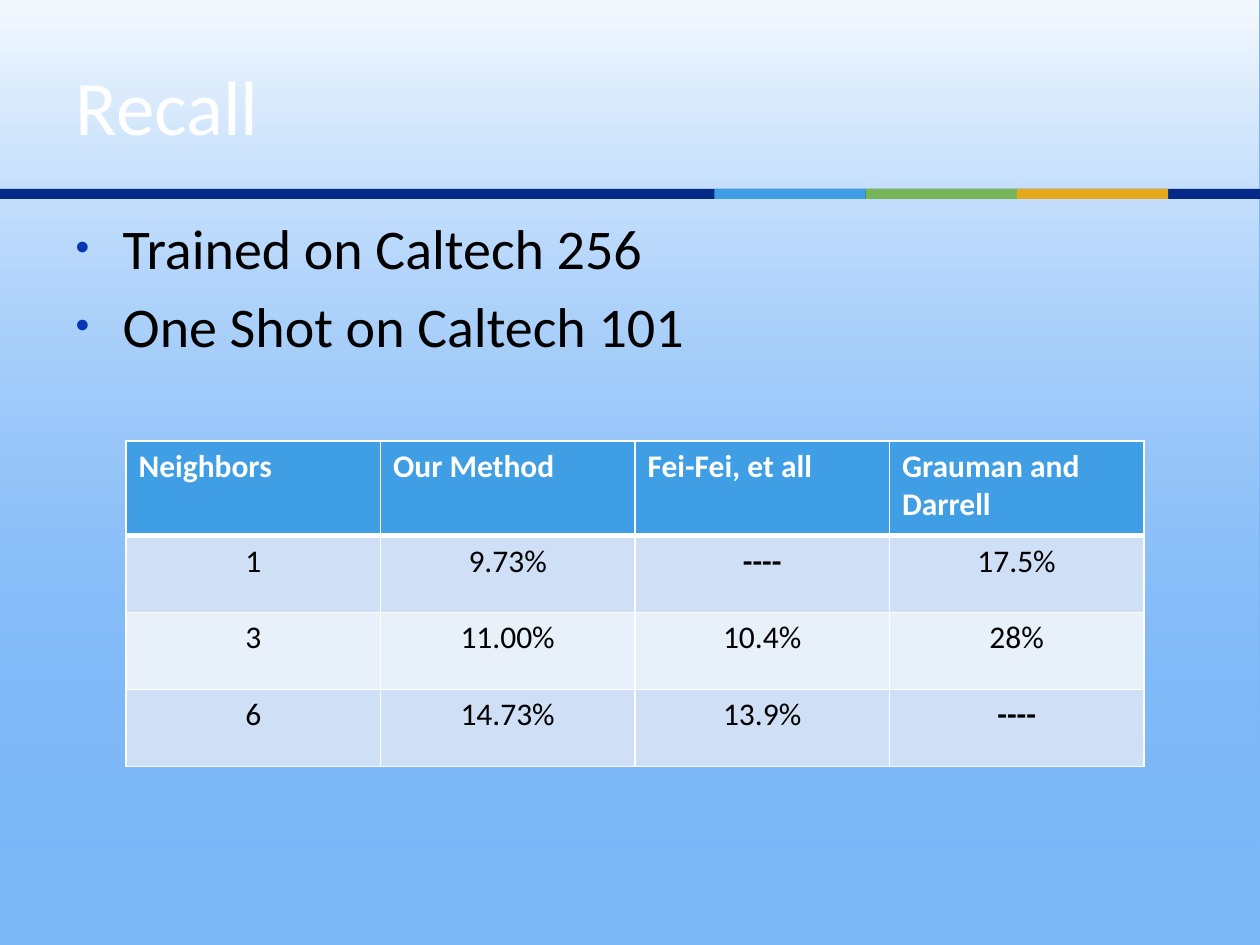
import pptx
import pptx.util
import pptx.oxml
import pptx.oxml.ns
import pptx.dml.color
import pptx.enum.shapes
import pptx.enum.text
from pptx.util import Cm, Pt

TITLE = "Recall"
BULLETS = ["Trained on Caltech 256", "One Shot on Caltech 101"]
ROWS = [
    ["Neighbors", "Our Method", "Fei-Fei, et all", "Grauman and Darrell"],
    ["1", "9.73%", "----", "17.5%"],
    ["3", "11.00%", "10.4%", "28%"],
    ["6", "14.73%", "13.9%", "----"],
]
COLORS = {
    "sky": "7CB7F8", "navy": "042986", "blue": "3F9EE4", "green": "77B559",
    "gold": "E4A81B", "bullet": "0536B3", "band": "CFDFF5", "pale": "E8F0FA",
    "white": "FFFFFF", "black": "000000",
}
FONT = "Calibri"
SLIDE_W, SLIDE_H = 25.4, 19.05
STRIPE_TOP, STRIPE_H = 3.81, 0.2
ACCENT_LEFT, ACCENT_W = 14.4, 3.05
COL_W, HEADER_H, ROW_H = 5.13, 1.91, 1.55


def rgb(name):
    return pptx.dml.color.RGBColor.from_string(COLORS[name])


def make_element(xml):
    """Turn a fragment with the a: prefix into an element."""
    return pptx.oxml.parse_xml(f"<a:wrap {pptx.oxml.ns.nsdecls('a')}>{xml}</a:wrap>")[0]


def style(p, size, color, bold=False):
    for r in p.runs:
        r.font.name, r.font.size, r.font.bold = FONT, Pt(size), bold
        r.font.color.rgb = rgb(color)


def place(sp, left, top, width, height):
    sp.left, sp.top, sp.width, sp.height = Cm(left), Cm(top), Cm(width), Cm(height)


def add_backdrop(s, left, top, width, height, color):
    """Add a plain rectangle behind the placeholders."""
    sp = s.shapes.add_shape(pptx.enum.shapes.MSO_SHAPE.RECTANGLE,
                            Cm(left), Cm(top), Cm(width), Cm(height))
    sp.shadow.inherit = False
    sp.fill.solid()
    sp.fill.fore_color.rgb = rgb(color)
    sp.line.fill.background()
    s.shapes.title.element.addprevious(sp.element)
    return sp


def add_glow(s):
    """Add the white glow that fades out down the slide."""
    sp = add_backdrop(s, -0.02, 0, SLIDE_W, 17.48, "white")
    solid = sp.element.spPr.find(pptx.oxml.ns.qn("a:solidFill"))
    solid.getparent().replace(solid, make_element(
        '<a:gradFill rotWithShape="1"><a:gsLst>'
        f'<a:gs pos="1000"><a:srgbClr val="{COLORS["sky"]}"><a:alpha val="0"/></a:srgbClr></a:gs>'
        f'<a:gs pos="100000"><a:srgbClr val="{COLORS["white"]}"><a:alpha val="92000"/></a:srgbClr></a:gs>'
        '</a:gsLst><a:lin ang="16200000" scaled="0"/></a:gradFill>'))


def add_stripe(s):
    add_backdrop(s, 0, STRIPE_TOP, SLIDE_W, STRIPE_H, "navy")
    for i, color in enumerate(["blue", "green", "gold"]):
        add_backdrop(s, ACCENT_LEFT + i * ACCENT_W, STRIPE_TOP, ACCENT_W, STRIPE_H, color)


def fill_title(s):
    sp = s.shapes.title
    place(sp, 1.27, 0.53, 22.86, 3.17)
    tf = sp.text_frame
    tf.text = TITLE
    tf.vertical_anchor = pptx.enum.text.MSO_ANCHOR.MIDDLE
    tf.paragraphs[0].alignment = pptx.enum.text.PP_ALIGN.LEFT
    style(tf.paragraphs[0], 44, "white")


def fill_body(s):
    sp = s.placeholders[1]
    place(sp, 1.27, 4.17, 22.86, 12.85)
    tf = sp.text_frame
    tf.text = "\n".join(BULLETS)
    for p in tf.paragraphs:
        style(p, 32, "black")
        pPr = p._p.get_or_add_pPr()
        pPr.set("marL", str(Cm(0.95)))
        pPr.set("indent", str(-Cm(0.95)))
        for xml in ('<a:spcBef><a:spcPct val="20000"/></a:spcBef>',
                    f'<a:buClr><a:srgbClr val="{COLORS["bullet"]}"/></a:buClr>',
                    '<a:buSzPct val="70000"/>',
                    '<a:buFont typeface="Arial"/>',
                    '<a:buChar char="•"/>'):
            pPr.append(make_element(xml))


def set_borders(cell, top, bottom):
    tcPr = cell._tc.get_or_add_tcPr()
    for side, width in (("L", 1), ("R", 1), ("T", top), ("B", bottom)):
        tcPr.append(make_element(
            f'<a:ln{side} w="{Pt(width)}"><a:solidFill><a:srgbClr val="{COLORS["white"]}"/>'
            f'</a:solidFill></a:ln{side}>'))


def add_results(s):
    n_rows, n_cols = len(ROWS), len(ROWS[0])
    table = s.shapes.add_table(n_rows, n_cols, Cm(2.54), Cm(8.89), Cm(n_cols * COL_W),
                               Cm(HEADER_H + (n_rows - 1) * ROW_H)).table
    for col in table.columns:
        col.width = Cm(COL_W)
    for i, values in enumerate(ROWS):
        header = i == 0
        table.rows[i].height = Cm(HEADER_H if header else ROW_H)
        for j, value in enumerate(values):
            cell = table.cell(i, j)
            set_borders(cell, 3 if i == 1 else 1, 3 if header else 1)
            cell.fill.solid()
            cell.fill.fore_color.rgb = rgb("blue" if header else "band" if i % 2 else "pale")
            cell.text_frame.text = value
            p = cell.text_frame.paragraphs[0]
            if not header:
                p.alignment = pptx.enum.text.PP_ALIGN.CENTER
            style(p, 18, "white" if header else "black", header or value == "----")


def main():
    prs = pptx.Presentation()
    prs.slide_width, prs.slide_height = Cm(SLIDE_W), Cm(SLIDE_H)
    s = prs.slides.add_slide(prs.slide_layouts[1])
    s.background.fill.solid()
    s.background.fill.fore_color.rgb = rgb("sky")
    add_glow(s)
    add_stripe(s)
    fill_title(s)
    fill_body(s)
    add_results(s)
    prs.save("out.pptx")


if __name__ == "__main__":
    main()
